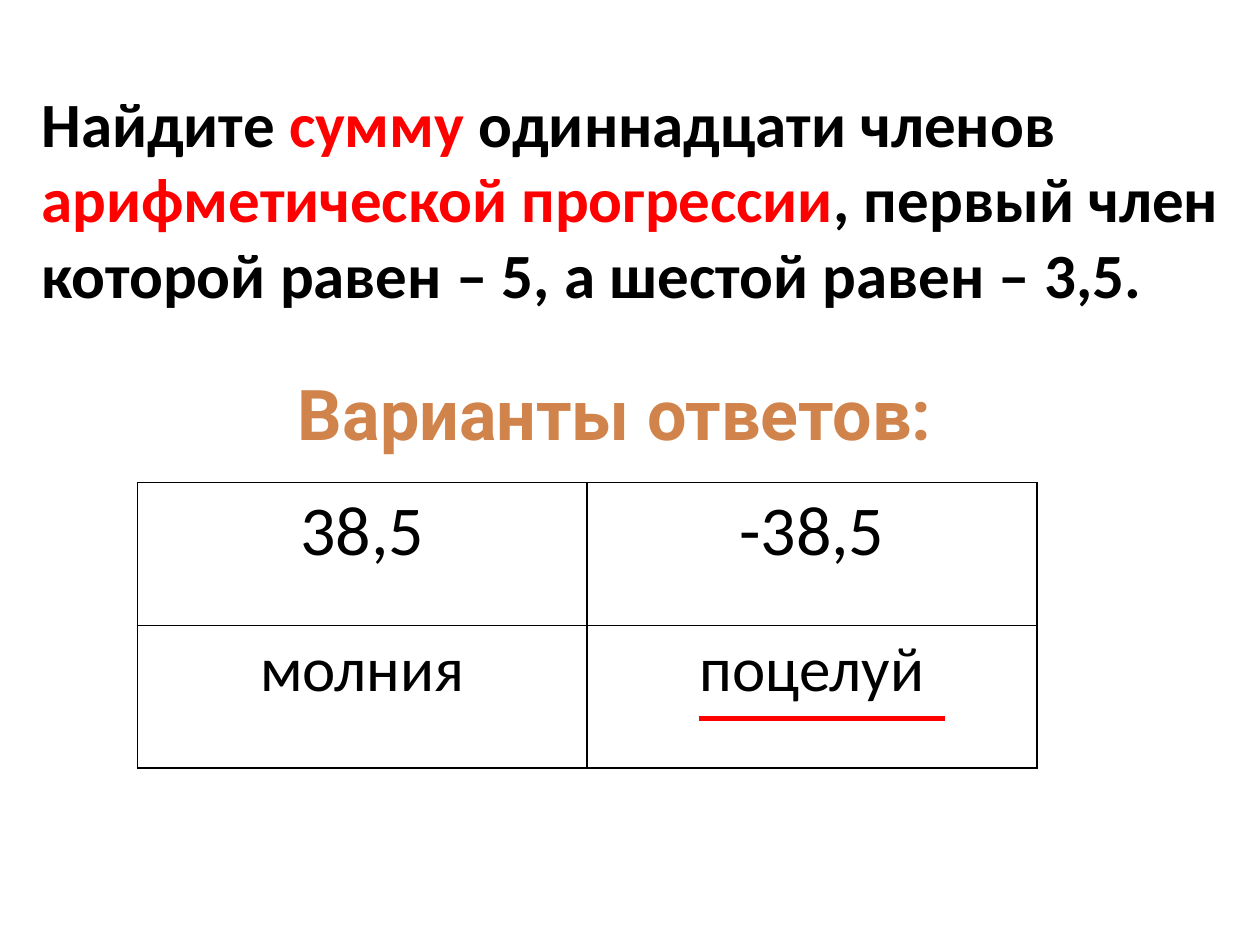
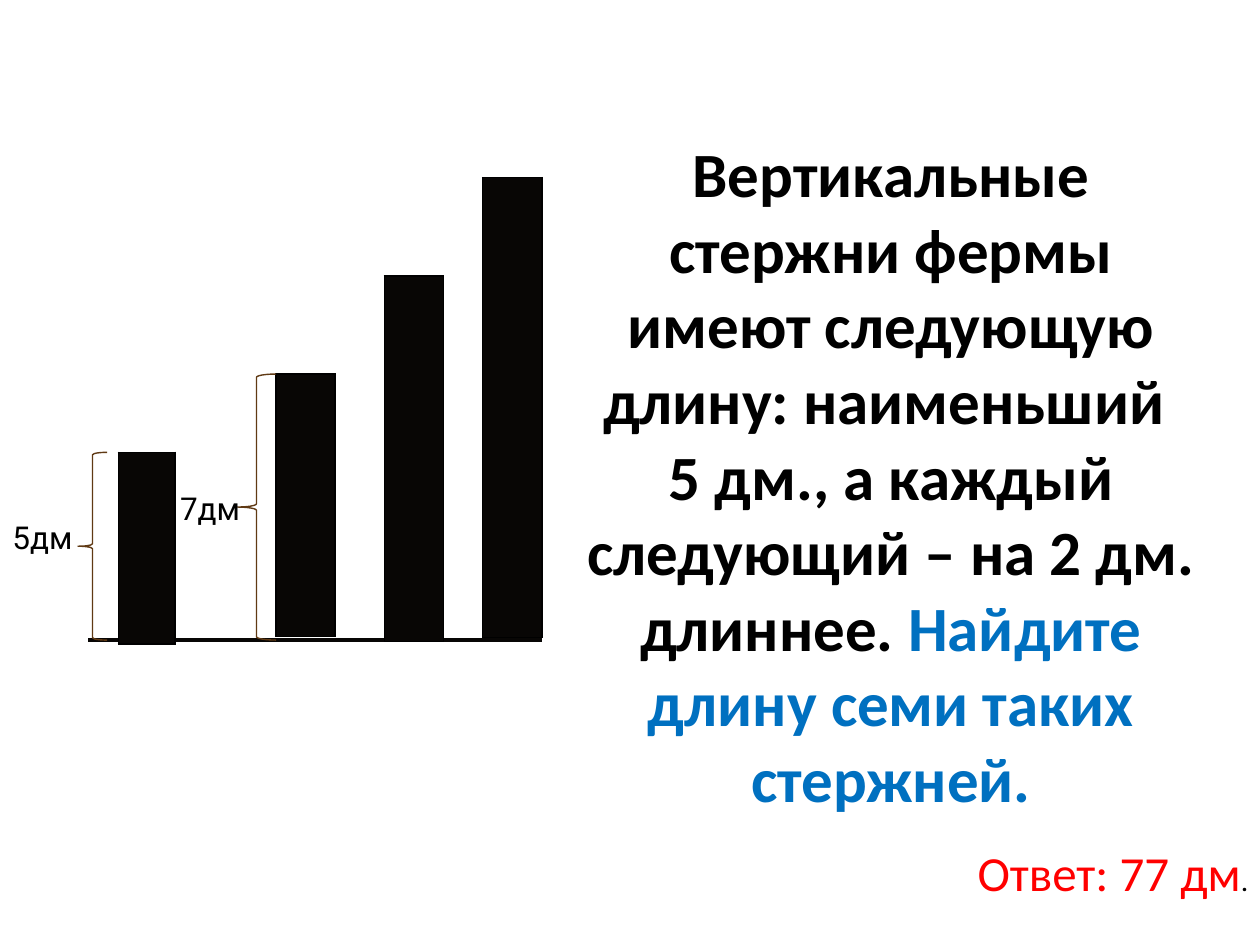
from lxml import etree
from pptx import Presentation
from pptx.dml.color import RGBColor
from pptx.enum.shapes import MSO_CONNECTOR, MSO_SHAPE
from pptx.enum.text import MSO_AUTO_SIZE, PP_ALIGN
from pptx.oxml.ns import qn
from pptx.util import Pt

LEFT, CENTER = PP_ALIGN.LEFT, PP_ALIGN.CENTER
STRAIGHT, BRACE = MSO_CONNECTOR.STRAIGHT, MSO_SHAPE.LEFT_BRACE
FIT_SHAPE = MSO_AUTO_SIZE.SHAPE_TO_FIT_TEXT

BLACK, RED, BLUE = "000000", "FF0000", "0070C0"
BRONZE, BROWN, ROD_BLACK = "D1834C", "603A14", "080605"

# Text formats
TASK = {"name": "Calibri", "size": 36, "bold": True, "color": BLACK}
TASK_RED = {**TASK, "color": RED}
TASK_BLUE = {**TASK, "color": BLUE}
HEADING = {"name": "Roboto", "size": 40, "bold": True, "color": BRONZE}
NUMBER = {"name": "Calibri", "size": 40, "color": BLACK}
WORD = {**NUMBER, "size": 36}
ANSWER = {"name": "Calibri", "size": 28, "color": RED}
LABEL = {"name": "Roboto", "size": 18, "color": BLACK}

# Slide 1: paragraphs are lists of (text, format)
SUM_TASK = [[
    ("Найдите ", TASK), ("сумму", TASK_RED), (" одиннадцати членов ", TASK),
    ("арифметической прогрессии", TASK_RED),
    (", первый член которой равен – 5, а шестой равен – 3,5.", TASK),
]]
OPTIONS_HEADING = [[("Варианты ответов:", HEADING)]]
OPTIONS = [
    [("38,5", NUMBER), ("-38,5", NUMBER)],
    [("молния", WORD), ("поцелуй", WORD)],
]

# Slide 2
RODS_TASK = [
    [("Вертикальные стержни фермы имеют следующую длину: наименьший ", TASK)],
    [("5 дм., а каждый следующий – на 2 дм. длиннее. ", TASK),
     ("Найдите длину семи таких стержней.", TASK_BLUE)],
]
RODS_ANSWER = [[("Ответ: 77 дм", ANSWER), (".", LABEL)]]
BASELINE = 365.8
RODS = [  # left, top, width, height
    (67.7, 258.5, 32.4, 109.4),
    (157.7, 213.8, 33.8, 149.8),
    (219.6, 157.7, 33.8, 208.8),
    (275.8, 101.5, 33.8, 262.8),
]
MEASURES = [  # text, label left, label top, brace left, brace width
    ("5дм", 0, 292.3, 44.6, 16.6),
    ("7дм", 95.8, 275.8, 135.4, 22.3),
]


def rgb(code):
    return RGBColor.from_string(code)


def points(*values):
    return [Pt(value) for value in values]


def write(frame, paragraphs, align):
    for index, spans in enumerate(paragraphs):
        para = frame.paragraphs[0] if index == 0 else frame.add_paragraph()
        para.alignment = align
        for text, text_format in spans:
            span = para.add_run()
            span.text = text
            for key, value in text_format.items():
                if key == "color":
                    span.font.color.rgb = rgb(value)
                else:
                    setattr(span.font, key, Pt(value) if key == "size" else value)


def add_text(page, area, paragraphs, align=LEFT, wrap=True):
    frame = page.shapes.add_textbox(*points(*area)).text_frame
    frame.word_wrap = wrap
    frame.auto_size = FIT_SHAPE
    write(frame, paragraphs, align)


def add_line(page, left, right, y, color, width):
    line = page.shapes.add_connector(STRAIGHT, *points(left, y, right, y))
    line.line.color.rgb = rgb(color)
    line.line.width = Pt(width)
    etree.SubElement(line.element.spPr, qn("a:effectLst"))


def add_borders(cell):
    """Draw a thin black line on each side; borders precede the cell fill."""
    properties = cell._tc.get_or_add_tcPr()
    for position, side in enumerate(("lnL", "lnR", "lnT", "lnB")):
        border = etree.Element(qn(f"a:{side}"), w=str(Pt(1)))
        fill = etree.SubElement(border, qn("a:solidFill"))
        etree.SubElement(fill, qn("a:srgbClr"), val=BLACK)
        properties.insert(position, border)


def add_grid(page, area, rows, fill=None):
    """Add a bordered table with equal cells; None leaves a cell empty."""
    table = page.shapes.add_table(len(rows), len(rows[0]), *points(*area)).table
    table.first_row = table.horz_banding = False
    for row_index, row in enumerate(rows):
        for column_index, content in enumerate(row):
            cell = table.cell(row_index, column_index)
            if fill:
                cell.fill.solid()
                cell.fill.fore_color.rgb = rgb(fill)
            else:
                cell.fill.background()
            add_borders(cell)
            if content:
                write(cell.text_frame, [[content]], CENTER)


def add_brace(page, area):
    brace = page.shapes.add_shape(BRACE, *points(*area))
    brace.shadow.inherit = False
    brace.fill.background()
    brace.line.color.rgb = rgb(BROWN)
    brace.line.width = Pt(0.79)


def build_sum_slide(page):
    add_grid(page, (78.5, 275.8, 514, 163.2), OPTIONS)
    add_text(page, (16.6, 44.6, 703.4, 138.2), SUM_TASK)
    add_line(page, 399.6, 540, 410.4, RED, 3)
    add_text(page, (112.3, 208.1, 478.1, 55.4), OPTIONS_HEADING, CENTER)


def build_rods_slide(page):
    add_line(page, 50.4, 309.6, BASELINE, ROD_BLACK, 2)
    for rod in RODS:
        add_grid(page, rod, [[None]], ROD_BLACK)
    add_text(page, (326.2, 73.4, 365.8, 399.6), RODS_TASK, CENTER)
    add_text(page, (551.5, 478.1, 171.4, 41), RODS_ANSWER, wrap=False)
    for rod, measure in zip(RODS, MEASURES):
        text, label_left, label_top, brace_left, brace_width = measure
        rod_top = rod[1]
        add_brace(page, (brace_left, rod_top, brace_width, BASELINE - rod_top))
        add_text(page, (label_left, label_top, 50.4, 28.8), [[(text, LABEL)]])


def main():
    deck = Presentation()
    deck.slide_width, deck.slide_height = points(720, 540)
    blank = deck.slide_layouts[6]
    for build in (build_sum_slide, build_rods_slide):
        build(deck.slides.add_slide(blank))
    deck.save("out.pptx")


if __name__ == "__main__":
    main()
